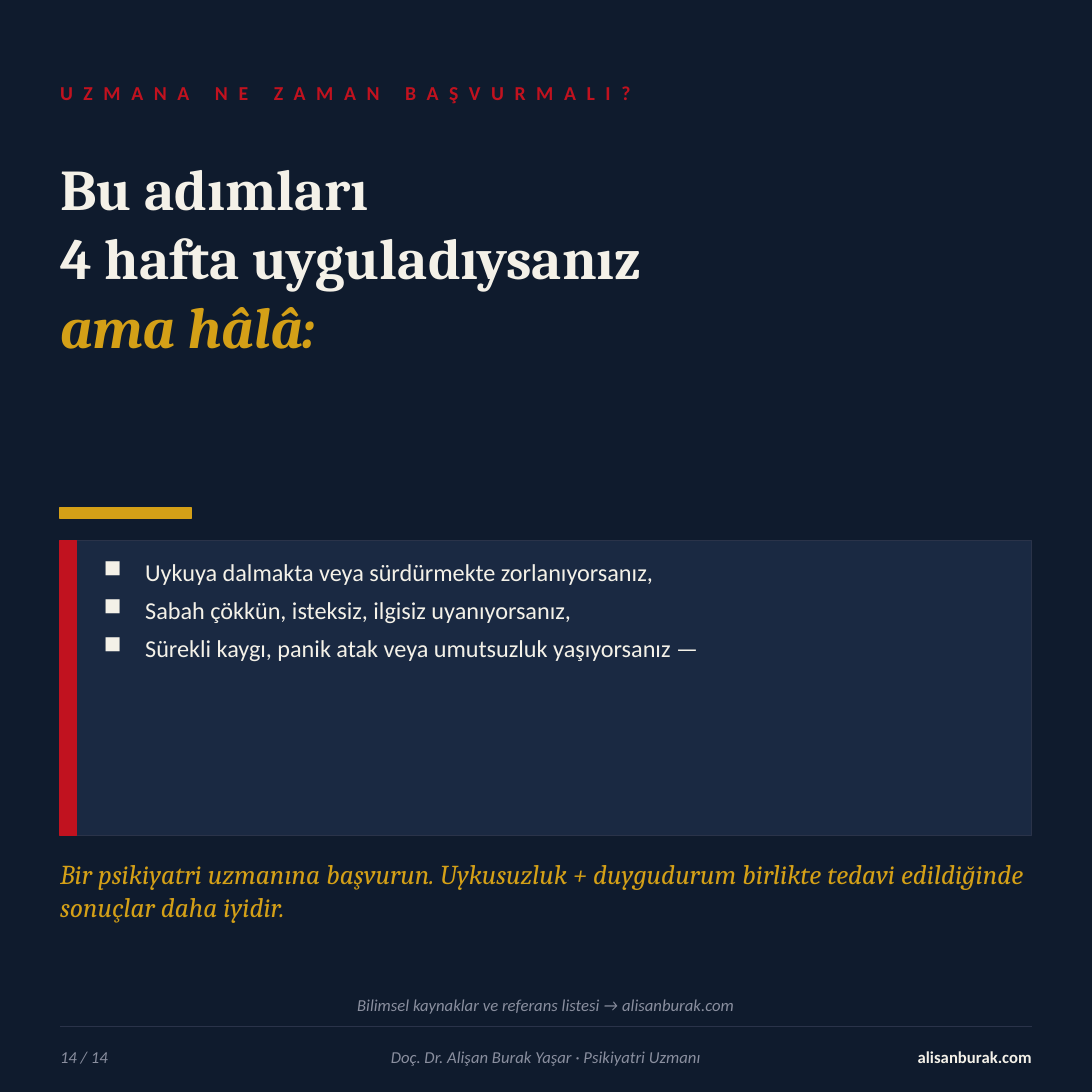
from lxml import etree
from pptx import Presentation
from pptx.dml.color import RGBColor
from pptx.enum.shapes import MSO_CONNECTOR, MSO_SHAPE
from pptx.enum.text import MSO_ANCHOR, PP_ALIGN
from pptx.oxml.ns import qn
from pptx.util import Inches, Pt

NAVY = RGBColor(0x0F, 0x1B, 0x2D)
PANEL = RGBColor(0x1A, 0x29, 0x42)
BORDER = RGBColor(0x2A, 0x33, 0x49)
RED = RGBColor(0xC1, 0x12, 0x1F)
GOLD = RGBColor(0xD4, 0xA0, 0x17)
CREAM = RGBColor(0xF4, 0xF1, 0xE8)
GREY = RGBColor(0x8A, 0x8F, 0x9F)
SANS, SERIF = "Calibri", "Cambria"

# Content
KICKER = "UZMANA NE ZAMAN BAŞVURMALI?"
TITLE = ["Bu adımları", "4 hafta uyguladıysanız", "ama hâlâ:"]
SYMPTOMS = [
    "Uykuya dalmakta veya sürdürmekte zorlanıyorsanız,",
    "Sabah çökkün, isteksiz, ilgisiz uyanıyorsanız,",
    "Sürekli kaygı, panik atak veya umutsuzluk yaşıyorsanız —",
]
ADVICE = ("Bir psikiyatri uzmanına başvurun. Uykusuzluk + duygudurum "
          "birlikte tedavi edildiğinde sonuçlar daha iyidir.")
SOURCES = "Bilimsel kaynaklar ve referans listesi → alisanburak.com"
PAGE = "14 / 14"
AUTHOR = "Doç. Dr. Alişan Burak Yaşar · Psikiyatri Uzmanı"
WEBSITE = "alisanburak.com"

# Layout in inches
SIZE = 10
MARGIN = 0.55
WIDTH = SIZE - 2 * MARGIN
PANEL_TOP, PANEL_HEIGHT = 4.95, 2.7
FOOTER_TOP, FOOTER_HEIGHT = 9.5, 0.35
BULLET_INDENT = 0.38


def style_run(run, size, font, color, bold=False, italic=False):
    run.font.size = Pt(size)
    run.font.name = font
    run.font.color.rgb = color
    run.font.bold = bold
    run.font.italic = italic


def add_text(slide, box, lines, size, font, color, bold=False, italic=False,
             align=PP_ALIGN.LEFT, anchor=MSO_ANCHOR.TOP):
    frame = slide.shapes.add_textbox(*map(Inches, box)).text_frame
    frame.word_wrap = True
    frame.vertical_anchor = anchor
    frame.margin_left = frame.margin_right = 0
    frame.margin_top = frame.margin_bottom = 0
    frame.text = "\n".join(lines)
    for paragraph in frame.paragraphs:
        paragraph.alignment = align
        style_run(paragraph.runs[0], size, font, color, bold, italic)
    return frame.paragraphs


def add_bar(slide, box, fill, line, line_width):
    shape = slide.shapes.add_shape(MSO_SHAPE.RECTANGLE, *map(Inches, box))
    shape.shadow.inherit = False
    shape.fill.solid()
    shape.fill.fore_color.rgb = fill
    shape.line.color.rgb = line
    shape.line.width = Pt(line_width)


def add_bullet(paragraph):
    properties = paragraph._p.get_or_add_pPr()
    properties.set("marL", str(Inches(BULLET_INDENT)))
    properties.set("indent", str(-Inches(BULLET_INDENT)))
    etree.SubElement(properties, qn("a:buChar")).set("char", "■")


presentation = Presentation()
presentation.slide_width = presentation.slide_height = Inches(SIZE)
slide = presentation.slides.add_slide(presentation.slide_layouts[6])
slide.background.fill.solid()
slide.background.fill.fore_color.rgb = NAVY

# Heading
kicker = add_text(slide, (MARGIN, 0.65, WIDTH, 0.4), [KICKER], 13, SANS, RED,
                  bold=True, anchor=MSO_ANCHOR.MIDDLE)
kicker[0].runs[0].font._element.set("spc", "700")
title = add_text(slide, (MARGIN, 1.4, WIDTH, 3.2), TITLE, 38, SERIF, CREAM, bold=True)
style_run(title[-1].runs[0], 38, SERIF, GOLD, bold=True, italic=True)
add_bar(slide, (MARGIN, 4.65, 1.2, 0.1), GOLD, GOLD, 1)

# Symptom panel
add_bar(slide, (MARGIN, PANEL_TOP, WIDTH, PANEL_HEIGHT), PANEL, BORDER, 0.75)
add_bar(slide, (MARGIN, PANEL_TOP, 0.15, PANEL_HEIGHT), RED, RED, 1)
symptoms = add_text(slide, (MARGIN + 0.4, PANEL_TOP + 0.15, 8.4, 2.45),
                    SYMPTOMS, 16, SANS, CREAM)
for paragraph in symptoms:
    add_bullet(paragraph)
for paragraph in symptoms[:-1]:
    paragraph.space_after = Pt(6)

# Advice
add_text(slide, (MARGIN, 7.85, WIDTH, 1.05), [ADVICE], 18, SERIF, GOLD, italic=True)

# Footer
rule = slide.shapes.add_connector(
    MSO_CONNECTOR.STRAIGHT, *map(Inches, (MARGIN, 9.4, MARGIN + WIDTH, 9.4)))
rule.line.color.rgb = BORDER
rule.line.width = Pt(0.75)
etree.SubElement(rule._element.spPr, qn("a:effectLst"))

footer_items = [
    (SOURCES, (MARGIN, 9.05, WIDTH, 0.3), PP_ALIGN.CENTER),
    (PAGE, (MARGIN, FOOTER_TOP, 1.5, FOOTER_HEIGHT), PP_ALIGN.LEFT),
    (AUTHOR, (2, FOOTER_TOP, 6, FOOTER_HEIGHT), PP_ALIGN.CENTER),
]
for text, box, align in footer_items:
    add_text(slide, box, [text], 11, SANS, GREY, italic=True,
             align=align, anchor=MSO_ANCHOR.MIDDLE)
add_text(slide, (7.6, FOOTER_TOP, 1.85, FOOTER_HEIGHT), [WEBSITE], 11, SANS, CREAM,
         bold=True, align=PP_ALIGN.RIGHT, anchor=MSO_ANCHOR.MIDDLE)

presentation.save("out.pptx")
